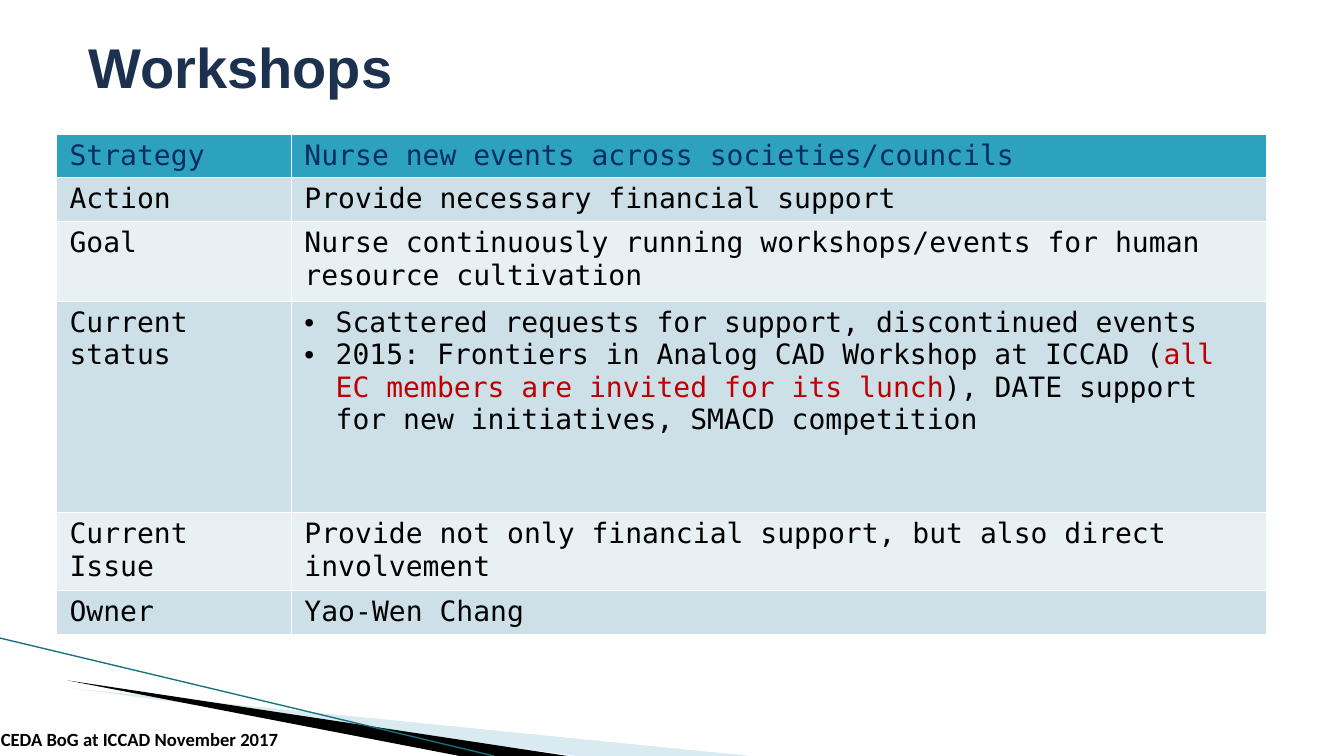
from lxml import etree
from pptx import Presentation
from pptx import util as u
from pptx.dml.color import RGBColor
from pptx.enum import shapes, text
from pptx.oxml.ns import qn

ROWS = [
    (0.43, "Strategy", ["Nurse new events across societies/councils"]),
    (0.43, "Action", ["Provide necessary financial support"]),
    (0.79, "Goal", ["Nurse continuously running workshops/events for human resource cultivation"]),
    (2.1, "Current status", [
        "Scattered requests for support, discontinued events",
        ("2015: Frontiers in Analog CAD Workshop at ICCAD (",
         "all EC members are invited for its lunch",
         "), DATE support for new initiatives, SMACD competition"),
    ]),
    (0.77, "Current Issue", ["Provide not only financial support, but also direct involvement"]),
    (0.43, "Owner", ["Yao-Wen Chang"]),
]
COLUMN_WIDTHS = [2.33, 9.67]
HEADER_FILL, BAND_FILLS = "2DA2BF", ["E8F0F4", "CDE0E8"]


def color(hex_value):
    return RGBColor.from_string(hex_value)


def set_font(font, name, size, hex_value, bold=False):
    font.name, font.size, font.bold = name, u.Pt(size), bold
    font.color.rgb = color(hex_value)


def add_wedge(slide, points, fill, opacity=100):
    corners = [(u.Inches(x), u.Inches(y)) for x, y in points]
    builder = slide.shapes.build_freeform(*corners[0])
    builder.add_line_segments(corners[1:])
    shape = builder.convert_to_shape()
    shape.shadow.inherit = False
    shape.fill.solid()
    shape.fill.fore_color.rgb = color(fill)
    shape.line.fill.background()
    if opacity < 100:
        fill_color = shape._element.spPr.find(qn("a:solidFill"))[0]
        etree.SubElement(fill_color, qn("a:alpha"), val=str(opacity * 1000))


def add_decoration(slide, left, top, bottom):
    """Sweeping wedges and thin line in the lower left corner."""
    wedge_left, wedge_top = left + 0.67, top + 0.42
    add_wedge(slide, [(wedge_left + 0.06, wedge_top + 0.08), (left + 7.44, bottom),
                      (left + 5.72, bottom)], "A0CBDC", 40)
    add_wedge(slide, [(wedge_left, wedge_top), (left + 5.63, bottom),
                      (left + 4.56, bottom)], "000000")
    line = slide.shapes.add_connector(
        shapes.MSO_CONNECTOR.STRAIGHT, u.Inches(left), u.Inches(top),
        u.Inches(left + 4.9), u.Inches(bottom))
    line.line.color.rgb = color("16707F")
    line.line.width = u.Pt(0.95)
    etree.SubElement(line._element.spPr, qn("a:effectLst"))


def add_text(slide, words, box, anchor, name, size, hex_value):
    frame = slide.shapes.add_textbox(*map(u.Inches, box)).text_frame
    frame.word_wrap = True
    frame.vertical_anchor = anchor
    paragraph = frame.paragraphs[0]
    paragraph.text = words
    set_font(paragraph.font, name, size, hex_value, bold=True)


def add_bullet(paragraph):
    properties = paragraph._p.get_or_add_pPr()
    indent = u.Inches(0.31)
    properties.set("marL", str(indent))
    properties.set("indent", str(-indent))
    etree.SubElement(properties, qn("a:buFont"), typeface="Arial")
    etree.SubElement(properties, qn("a:buChar"), char="•")


def fill_cell(cell, paragraphs, fill, hex_value):
    cell.margin_left = cell.margin_right = u.Inches(0.13)
    cell.margin_top = cell.margin_bottom = u.Inches(0.05)
    cell.fill.solid()
    cell.fill.fore_color.rgb = color(fill)
    frame = cell.text_frame
    for index, content in enumerate(paragraphs):
        paragraph = frame.add_paragraph() if index else frame.paragraphs[0]
        if len(paragraphs) > 1:
            add_bullet(paragraph)
        pieces = (content,) if isinstance(content, str) else content
        for position, piece in enumerate(pieces):
            run = paragraph.add_run()
            run.text = piece
            # The middle piece of a split sentence is highlighted
            run_color = "C00000" if position == 1 else hex_value
            set_font(run.font, "DejaVu Sans Mono", 20, run_color)


def add_plan_table(slide, left, top):
    heights = [row[0] for row in ROWS]
    table = slide.shapes.add_table(
        len(ROWS), len(COLUMN_WIDTHS), u.Inches(left), u.Inches(top),
        u.Inches(sum(COLUMN_WIDTHS)), u.Inches(sum(heights))).table
    table.horz_banding = False
    for column, width in zip(table.columns, COLUMN_WIDTHS):
        column.width = u.Inches(width)
    for index, (height, label, details) in enumerate(ROWS):
        table.rows[index].height = u.Inches(height)
        fill = BAND_FILLS[index % 2] if index else HEADER_FILL
        hex_value = "000000" if index else "002D62"
        fill_cell(table.cell(index, 0), [label], fill, hex_value)
        fill_cell(table.cell(index, 1), details, fill, hex_value)


def main():
    presentation = Presentation()
    presentation.slide_width = u.Inches(13.33)
    presentation.slide_height = u.Inches(7.5)
    slide = presentation.slides.add_slide(presentation.slide_layouts[6])

    add_decoration(slide, 0, 6.33, 7.5)
    # Title
    add_text(slide, "Workshops", (0.78, 0.16, 11.46, 1),
             text.MSO_ANCHOR.MIDDLE, "Arial", 40, "1C314E")
    add_plan_table(slide, 0.56, 1.33)
    # Footer
    add_text(slide, "CEDA BoG at ICCAD November 2017", (-0.09, 7.25, 3.43, 0.24),
             text.MSO_ANCHOR.BOTTOM, "Calibri", 13.3, "000000")
    presentation.save("out.pptx")


if __name__ == "__main__":
    main()
